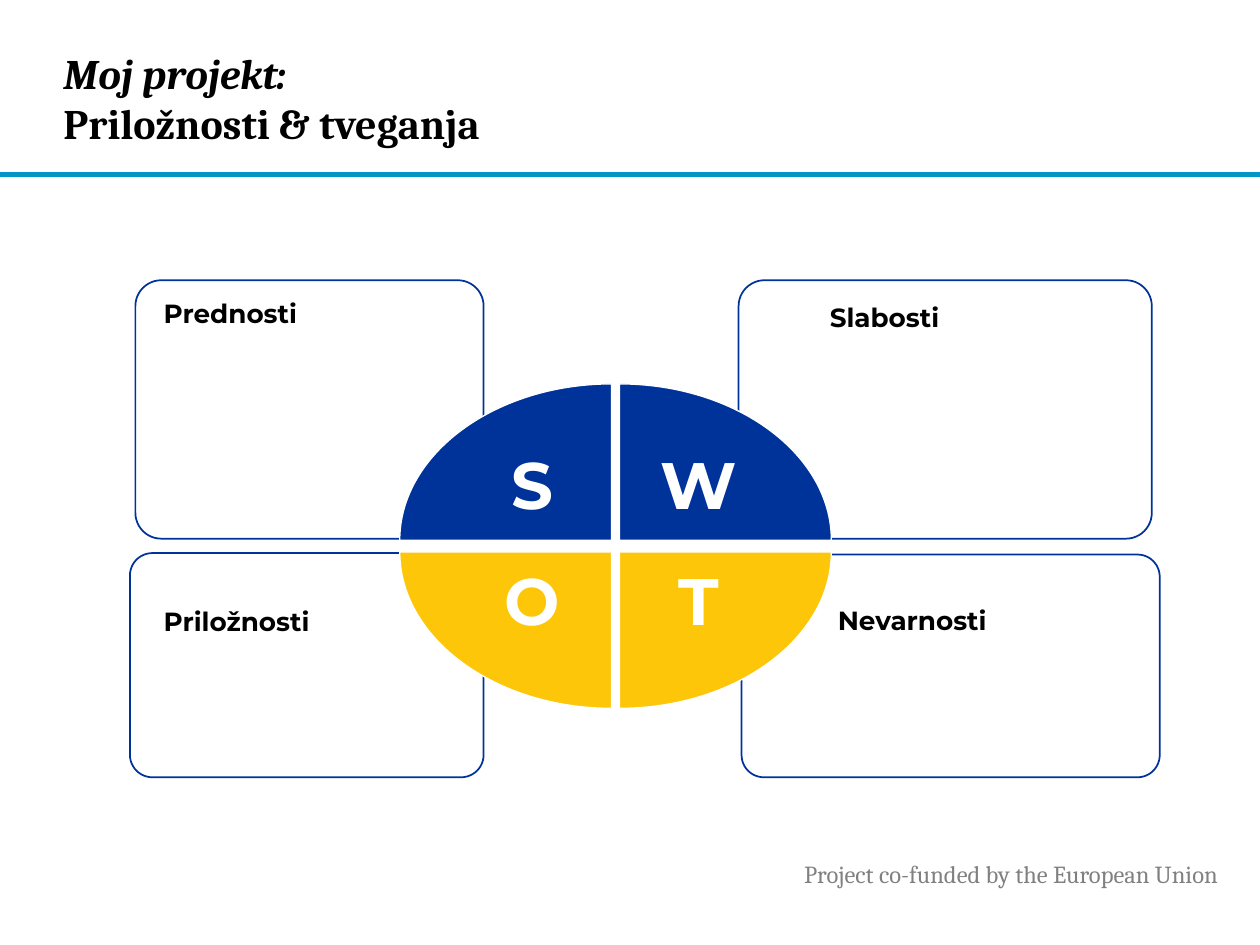
import copy
from dataclasses import dataclass

import lxml.etree
import pptx
import pptx.dml.color
import pptx.enum.shapes
import pptx.enum.text
import pptx.oxml.ns
import pptx.util

Cm = pptx.util.Cm
Pt = pptx.util.Pt
RGBColor = pptx.dml.color.RGBColor
Anchor = pptx.enum.text.MSO_ANCHOR
Shape = pptx.enum.shapes.MSO_SHAPE
qn = pptx.oxml.ns.qn

BLUE = RGBColor(0x00, 0x33, 0x99)
YELLOW = RGBColor(0xFD, 0xC6, 0x08)
TEAL = RGBColor(0x0C, 0x94, 0xB7)
SKY = RGBColor(0x00, 0x96, 0xD3)
GREY = RGBColor(0x80, 0x80, 0x80)
BLACK = RGBColor(0, 0, 0)
WHITE = RGBColor(0xFF, 0xFF, 0xFF)

TITLE_FONT = {"name": "Cambria", "size": Pt(24), "bold": True}
FOOTER_FONT = {"name": "Cambria", "size": Pt(14)}
LABEL_FONT = {"name": "Montserrat", "size": Pt(15), "bold": True}
LETTER_FONT = {"name": "Montserrat", "size": Pt(37.5), "bold": True}

CENTRE_X, CENTRE_Y = 12.41, 11.01
GAP_X, GAP_Y = 0.08, 0.12
RADIUS_X, RADIUS_Y = 4.27, 3.15
ARC_PULL = 0.55
WIDE_INSET, NARROW_INSET = 1.4, 0.33


@dataclass(frozen=True)
class Area:
    left: float
    top: float
    width: float
    height: float

    def lengths(self) -> list:
        return [Cm(v) for v in (self.left, self.top, self.width, self.height)]


@dataclass(frozen=True)
class Quadrant:
    letter: str
    label: str
    side_x: int
    side_y: int
    colour: RGBColor
    frame: Area
    label_area: Area
    label_inset: float = 0.13


QUADRANTS = [
    Quadrant("S", "Prednosti", -1, -1, BLUE,
             Area(2.73, 5.65, 7.02, 5.21), Area(3.05, 5.87, 6.15, 4.83)),
    Quadrant("W", "Slabosti", 1, -1, BLUE,
             Area(14.89, 5.65, 8.33, 5.21), Area(16.48, 5.28, 7.19, 5.16), 0.8),
    Quadrant("O", "Priložnosti", -1, 1, YELLOW,
             Area(2.62, 11.15, 7.13, 4.52), Area(3.05, 12.07, 6.25, 3.76)),
    Quadrant("T", "Nevarnosti", 1, 1, YELLOW,
             Area(14.95, 11.18, 8.43, 4.49), Area(16.64, 12.05, 6.88, 4.04)),
]


def add_span(para, text: str, font: dict, colour: RGBColor) -> None:
    span = para.add_run()
    span.text = text
    for name, value in font.items():
        setattr(span.font, name, value)
    span.font.color.rgb = colour


def add_box(page, area: Area, **frame_format):
    box = page.shapes.add_textbox(*area.lengths())
    for name, value in {"word_wrap": True, **frame_format}.items():
        setattr(box.text_frame, name, value)
    return box.text_frame.paragraphs[0]


def draw_rule(page) -> None:
    rule = page.shapes.add_shape(Shape.RECTANGLE, *Area(0, 3.48, 25.4, 0.08).lengths())
    rule.shadow.inherit = False
    rule.fill.solid()
    rule.fill.fore_color.rgb = TEAL
    rule.line.color.rgb = SKY
    rule.line.width = Pt(1)


def draw_title(page) -> None:
    para = add_box(page, Area(1.28, 0.46, 18.47, 3.02), vertical_anchor=Anchor.MIDDLE,
                   margin_left=0, margin_top=0, margin_right=0, margin_bottom=0)
    add_span(para, "Moj projekt:", {**TITLE_FONT, "italic": True}, BLACK)
    para.add_line_break()
    add_span(para, "Priložnosti & tveganja", TITLE_FONT, BLACK)


def draw_footer(page) -> None:
    para = add_box(page, Area(15.96, 17.2, 9.3, 0.86))
    add_span(para, "Project co-funded by the European Union", FOOTER_FONT, GREY)


def draw_frame(page, quadrant: Quadrant) -> None:
    frame = page.shapes.add_shape(Shape.ROUNDED_RECTANGLE, *quadrant.frame.lengths())
    frame.adjustments[0] = 0.1
    frame.shadow.inherit = False
    frame.fill.background()
    frame.line.color.rgb = BLUE
    frame.line.width = Pt(1)


def bend_last_segment(freeform) -> None:
    corner, start, end = freeform._element.findall(".//" + qn("a:pt"))
    segment = end.getparent()
    curve = lxml.etree.Element(qn("a:cubicBezTo"))
    for base, target in ((start, end), (end, start)):
        control = copy.deepcopy(base)
        for axis in ("x", "y"):
            reach = int(target.get(axis)) - int(corner.get(axis))
            control.set(axis, str(int(base.get(axis)) + round(ARC_PULL * reach)))
        curve.append(control)
    segment.getparent().replace(segment, curve)
    curve.append(end)


def draw_quarter(page, quadrant: Quadrant) -> None:
    corner_x = CENTRE_X + quadrant.side_x * GAP_X
    corner_y = CENTRE_Y + quadrant.side_y * GAP_Y
    builder = page.shapes.build_freeform(Cm(corner_x), Cm(corner_y))
    builder.add_line_segments([
        (Cm(corner_x + quadrant.side_x * RADIUS_X), Cm(corner_y)),
        (Cm(corner_x), Cm(corner_y + quadrant.side_y * RADIUS_Y)),
    ], close=True)
    quarter = builder.convert_to_shape()
    bend_last_segment(quarter)
    quarter.shadow.inherit = False
    quarter.fill.solid()
    quarter.fill.fore_color.rgb = quadrant.colour
    quarter.line.color.rgb = WHITE
    quarter.line.width = Pt(0.75)

    on_left, on_top = quadrant.side_x < 0, quadrant.side_y < 0
    frame_format = {
        "word_wrap": True,
        "vertical_anchor": Anchor.BOTTOM if on_top else Anchor.TOP,
        "margin_left": Cm(WIDE_INSET if on_left else NARROW_INSET),
        "margin_right": Cm(NARROW_INSET if on_left else WIDE_INSET),
        "margin_top": Cm(WIDE_INSET if on_top else NARROW_INSET),
        "margin_bottom": Cm(NARROW_INSET if on_top else WIDE_INSET),
    }
    for name, value in frame_format.items():
        setattr(quarter.text_frame, name, value)
    para = quarter.text_frame.paragraphs[0]
    para.alignment = pptx.enum.text.PP_ALIGN.CENTER
    para.line_spacing = 0.9
    add_span(para, quadrant.letter, LETTER_FONT, WHITE)


def draw_label(page, quadrant: Quadrant) -> None:
    para = add_box(page, quadrant.label_area, margin_top=Cm(quadrant.label_inset))
    add_span(para, quadrant.label, LABEL_FONT, BLACK)


def main() -> None:
    deck = pptx.Presentation()
    deck.slide_width, deck.slide_height = Cm(25.4), Cm(19.05)
    page = deck.slides.add_slide(deck.slide_layouts[6])
    draw_rule(page)
    draw_footer(page)
    for draw in (draw_frame, draw_quarter, draw_label):
        for quadrant in QUADRANTS:
            draw(page, quadrant)
    draw_title(page)
    deck.save("out.pptx")


if __name__ == "__main__":
    main()
